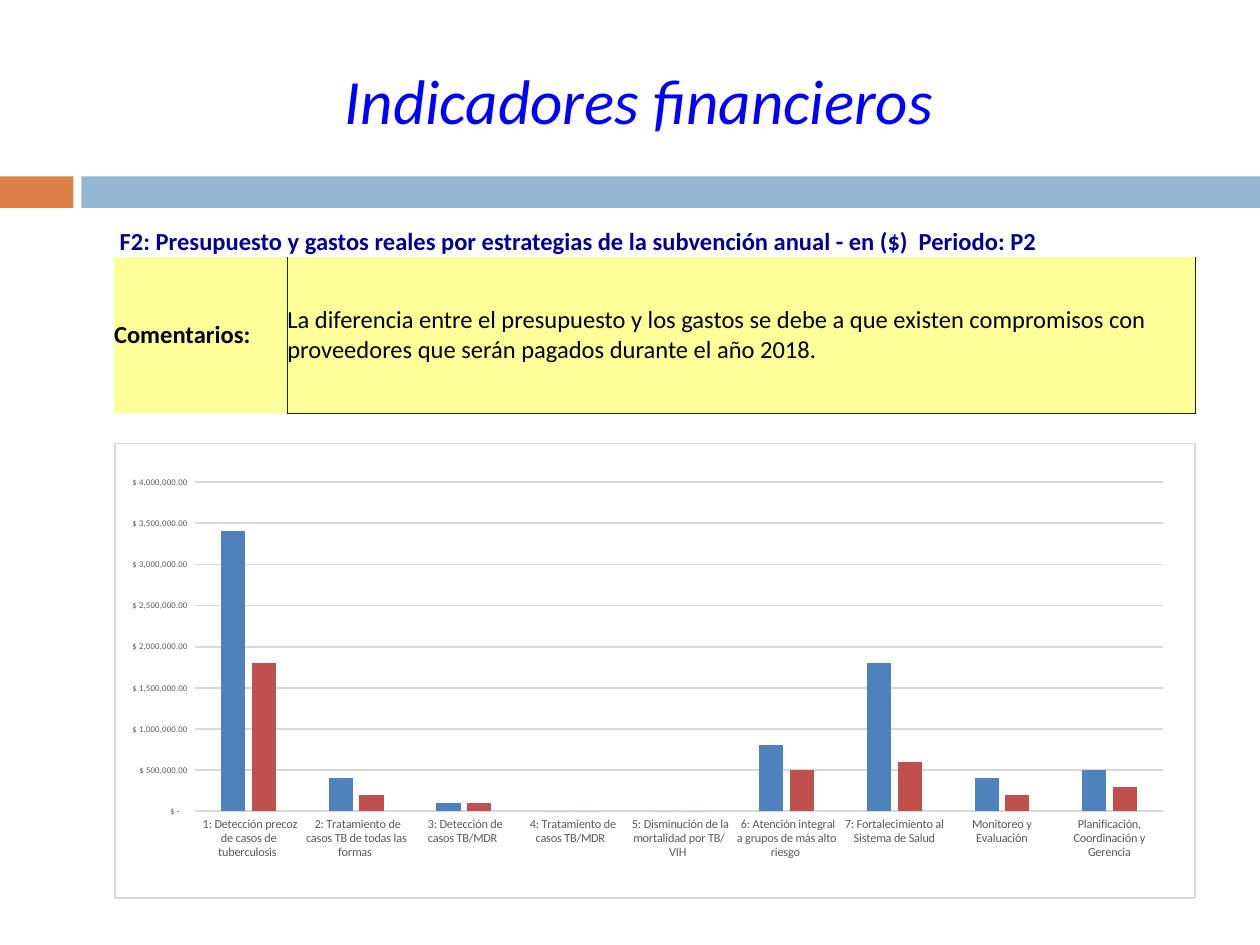
from lxml import etree
from pptx import Presentation
from pptx.chart.data import CategoryChartData
from pptx.dml.color import RGBColor
from pptx.enum.chart import XL_CHART_TYPE, XL_TICK_MARK
from pptx.enum.shapes import MSO_SHAPE
from pptx.enum.text import MSO_ANCHOR, PP_ALIGN
from pptx.oxml import parse_xml
from pptx.oxml.ns import nsdecls, qn
from pptx.util import Pt

FONT = "Calibri"
GREY = "D9D9D9"
YELLOW = "FFFF99"
CHART_WIDTH = 618
CHART_HEIGHT = 260.5
CATEGORIES = [
    " 1: Detección precoz de casos de tuberculosis ",
    " 2: Tratamiento de casos TB de todas las formas ",
    " 3: Detección de casos TB/MDR ",
    " 4: Tratamiento de casos TB/MDR ",
    " 5: Disminución de la mortalidad por TB/VIH ",
    " 6: Atención integral a grupos de más alto riesgo ",
    "7: Fortalecimiento al Sistema de Salud",
    "Monitoreo y Evaluación",
    "Planificación, Coordinación y Gerencia",
]
SERIES = [
    ("Series 1", "4F81BD",
     [3400000, 400000, 100000, 0, 0, 800000, 1800000, 400000, 500000]),
    ("Series 2", "C0504D",
     [1800000, 200000, 100000, 0, 0, 500000, 600000, 200000, 300000]),
]


def color(value):
    return RGBColor.from_string(value)


def style_font(font, size, value, bold=False, italic=False):
    font.name = FONT
    font.size = Pt(size)
    font.bold = bold
    font.italic = italic
    font.color.rgb = color(value)


def add_band(slide, left, width, fill):
    shape = slide.shapes.add_shape(MSO_SHAPE.RECTANGLE, Pt(left), Pt(100.8), Pt(width), Pt(18))
    shape.shadow.inherit = False
    shape.fill.solid()
    shape.fill.fore_color.rgb = color(fill)
    shape.line.fill.background()


def add_title(slide, text):
    text_frame = slide.shapes.add_textbox(Pt(48.25), Pt(18), Pt(642), Pt(78)).text_frame
    text_frame.word_wrap = True
    text_frame.vertical_anchor = MSO_ANCHOR.MIDDLE
    text_frame.text = text
    paragraph = text_frame.paragraphs[0]
    paragraph.alignment = PP_ALIGN.CENTER
    style_font(paragraph.runs[0].font, 36, "0000FF", italic=True)


def set_borders(cell, sides):
    properties = cell._tc.get_or_add_tcPr()
    for index, side in enumerate("LRTB"):
        if side in sides:
            paint = '<a:solidFill><a:srgbClr val="003300"/></a:solidFill>'
        else:
            paint = "<a:noFill/>"
        line = parse_xml(f'<a:ln{side} {nsdecls("a")} w="{Pt(0.5)}">{paint}</a:ln{side}>')
        properties.insert(index, line)


def fill_cell(cell, text, value, bold, anchor, fill=None, sides=""):
    cell.margin_left = cell.margin_right = cell.margin_top = cell.margin_bottom = 0
    cell.vertical_anchor = anchor
    cell.text_frame.text = text
    for run in cell.text_frame.paragraphs[0].runs:
        style_font(run.font, 14, value, bold)
    if fill:
        cell.fill.solid()
        cell.fill.fore_color.rgb = color(fill)
    else:
        cell.fill.background()
    set_borders(cell, sides)


def add_comments(slide):
    table = slide.shapes.add_table(2, 2, Pt(65.2), Pt(122.4), Pt(618), Pt(114)).table
    table.first_row = False
    table.horz_banding = False
    for column, width in zip(table.columns, (99, 519)):
        column.width = Pt(width)
    for row, height in zip(table.rows, (24.5, 89.3)):
        row.height = Pt(height)
    heading = table.cell(0, 0)
    heading.merge(table.cell(0, 1))
    fill_cell(heading, " F2: Presupuesto y gastos reales por estrategias de la subvención anual"
              " - en ($)  Periodo: P2", "000099", True, MSO_ANCHOR.BOTTOM)
    set_borders(table.cell(0, 1), "")
    fill_cell(table.cell(1, 0), "Comentarios:", "000000", True, MSO_ANCHOR.MIDDLE, YELLOW, "R")
    fill_cell(table.cell(1, 1), "La diferencia entre el presupuesto y los gastos se debe a que existen"
              " compromisos con proveedores que serán pagados durante el año 2018.",
              "000000", False, MSO_ANCHOR.MIDDLE, YELLOW, "LRB")


def style_line(line, value):
    line.color.rgb = color(value)
    line.width = Pt(1)


def style_axis(axis, size):
    axis.major_tick_mark = axis.minor_tick_mark = XL_TICK_MARK.NONE
    style_font(axis.tick_labels.font, size, "595959")


def frame_chart(chart):
    chart_space = chart._chartSpace
    chart_space.chart.addnext(parse_xml(
        f'<c:spPr {nsdecls("c", "a")}><a:solidFill><a:srgbClr val="FFFFFF"/></a:solidFill>'
        f'<a:ln w="{Pt(1)}"><a:solidFill><a:srgbClr val="{GREY}"/></a:solidFill></a:ln></c:spPr>'))


def place_plot(chart, left, top, width, height):
    plot_area = chart._chartSpace.chart.plotArea
    for old_layout in plot_area.findall(qn("c:layout")):
        plot_area.remove(old_layout)
    layout = etree.Element(qn("c:layout"))
    manual = etree.SubElement(layout, qn("c:manualLayout"))
    settings = [("layoutTarget", "inner"), ("xMode", "edge"), ("yMode", "edge"),
                ("x", left / CHART_WIDTH), ("y", top / CHART_HEIGHT),
                ("w", width / CHART_WIDTH), ("h", height / CHART_HEIGHT)]
    for name, value in settings:
        etree.SubElement(manual, qn(f"c:{name}")).set("val", str(value))
    plot_area.insert(0, layout)


def add_column_chart(slide):
    data = CategoryChartData()
    data.categories = CATEGORIES
    for name, _, values in SERIES:
        data.add_series(name, values)
    chart = slide.shapes.add_chart(XL_CHART_TYPE.COLUMN_CLUSTERED, Pt(65.2), Pt(253),
                                   Pt(CHART_WIDTH), Pt(CHART_HEIGHT), data).chart
    chart.has_title = False
    chart.has_legend = False
    style_font(chart.font, 11, "000000")
    plot = chart.plots[0]
    plot.vary_by_categories = False
    plot.gap_width = 219
    plot.overlap = -27
    for series, (_, fill, _) in zip(plot.series, SERIES):
        series.format.fill.solid()
        series.format.fill.fore_color.rgb = color(fill)
    style_axis(chart.category_axis, 7)
    style_line(chart.category_axis.format.line, GREY)
    value_axis = chart.value_axis
    style_axis(value_axis, 5)
    value_axis.minimum_scale = 0
    value_axis.maximum_scale = 4000000
    value_axis.major_unit = 500000
    value_axis.format.line.fill.background()
    style_line(value_axis.major_gridlines.format.line, GREY)
    value_axis.tick_labels.number_format = '"$ "#,##0.00_ ;"$ "-#,##0.00_ ;"$ -"_0_0_ '
    value_axis.tick_labels.number_format_is_linked = False
    place_plot(chart, 45.75, 22.1, 554.3, 188.9)
    frame_chart(chart)


def main():
    presentation = Presentation()
    presentation.slide_width = Pt(720)
    presentation.slide_height = Pt(540)
    slide = presentation.slides.add_slide(presentation.slide_layouts[6])
    add_band(slide, 0, 42, "DD8047")
    add_band(slide, 46.5, 673.5, "94B6D2")
    add_title(slide, "Indicadores financieros ")
    add_comments(slide)
    add_column_chart(slide)
    presentation.save("out.pptx")


if __name__ == "__main__":
    main()
